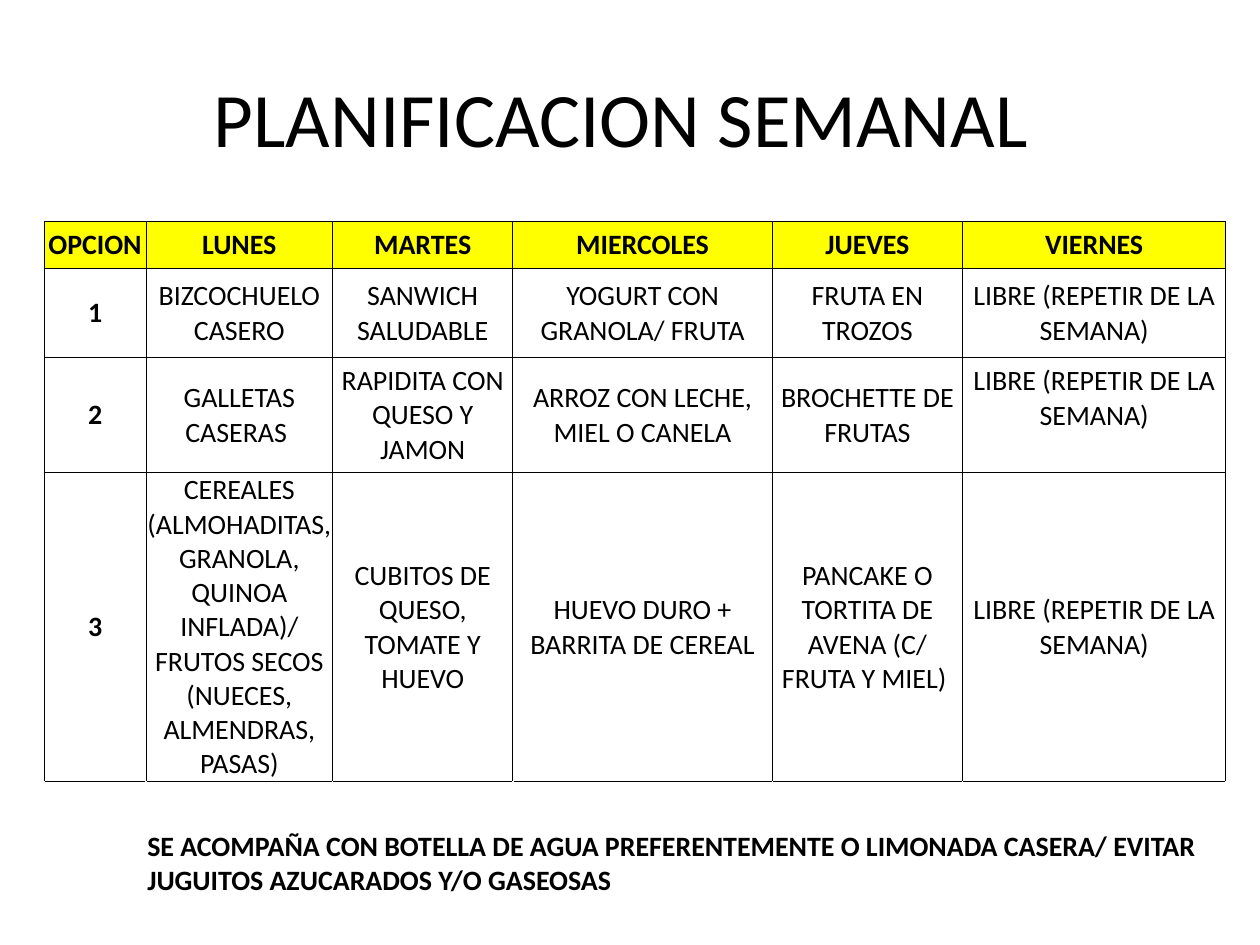
from lxml import etree
from pptx import Presentation
from pptx.dml.color import RGBColor
from pptx.enum import text as t
from pptx.oxml import ns
from pptx.util import Pt

COLORS = {"ink": "000000", "header": "FFFF00"}
FONT = "Calibri"
TITLE = "PLANIFICACION SEMANAL "
FREE = "LIBRE (REPETIR DE LA SEMANA)"
MENU = [
    ["OPCION", "LUNES", "MARTES", "MIERCOLES", "JUEVES", "VIERNES"],
    ["1", "BIZCOCHUELO CASERO", "SANWICH SALUDABLE", "YOGURT CON GRANOLA/ FRUTA",
     "FRUTA EN TROZOS", FREE],
    ["2", "GALLETAS CASERAS ", "RAPIDITA CON QUESO Y JAMON",
     "ARROZ CON LECHE, MIEL O CANELA", "BROCHETTE DE FRUTAS", FREE],
    ["3", "CEREALES (ALMOHADITAS, GRANOLA, QUINOA INFLADA)/\n"
     "FRUTOS SECOS (NUECES, ALMENDRAS,\nPASAS)",
     "CUBITOS DE QUESO, TOMATE Y HUEVO", "HUEVO DURO + BARRITA DE CEREAL",
     "PANCAKE O TORTITA DE AVENA (C/ FRUTA Y MIEL) ", FREE],
]
NOTE = ("SE ACOMPAÑA CON BOTELLA DE AGUA PREFERENTEMENTE O LIMONADA CASERA/ "
        "EVITAR JUGUITOS AZUCARADOS Y/O GASEOSAS")

LEFT, TOP = 25.2, 100
COLS = [58.3, 106.6, 103, 148.3, 108.7, 150.5]
ROWS = [26.6, 26.6, 51.1, 65.5, 176.4, 26.6, 40]
FIRST = 1  # table row of the menu header; the row above it is blank
LAST = FIRST + len(MENU) - 1
LINE = 19.5


def write(tf, content, size=16, bold=False, align=t.PP_ALIGN.CENTER):
    """Fill a text frame, one paragraph for each line of content."""
    for i, line in enumerate(content.split("\n")):
        p = tf.paragraphs[0] if i == 0 else tf.add_paragraph()
        p.alignment = align
        r = p.add_run()
        r.text = line
        r.font.name, r.font.size, r.font.bold = FONT, Pt(size), bold
        r.font.color.rgb = RGBColor.from_string(COLORS["ink"])


def add_borders(cell, sides):
    """Draw thin lines on the given sides; call before the cell is filled."""
    for side in sides:
        ln = etree.SubElement(cell._tc.get_or_add_tcPr(), ns.qn(f"a:ln{side}"),
                              w=str(Pt(0.5)))
        fill = etree.SubElement(ln, ns.qn("a:solidFill"))
        etree.SubElement(fill, ns.qn("a:srgbClr"), val=COLORS["ink"])


def border_sides(row):
    if FIRST <= row <= LAST:
        return "LRTB"
    return {FIRST - 1: "B", LAST + 1: "T"}.get(row, "")


def add_menu(s):
    table = s.shapes.add_table(len(ROWS), len(COLS), Pt(LEFT), Pt(TOP),
                               Pt(sum(COLS)), Pt(sum(ROWS))).table
    table.first_row = table.horz_banding = False
    for col, width in zip(table.columns, COLS):
        col.width = Pt(width)
    for y, height in enumerate(ROWS):
        table.rows[y].height = Pt(height)
        for x in range(len(COLS)):
            cell = table.cell(y, x)
            add_borders(cell, border_sides(y))
            cell.margin_left = cell.margin_right = cell.margin_top = Pt(0.7)
            cell.margin_bottom = Pt(0)
            cell.vertical_anchor = t.MSO_ANCHOR.MIDDLE
            if y == FIRST:
                cell.fill.solid()
                cell.fill.fore_color.rgb = RGBColor.from_string(COLORS["header"])
            else:
                cell.fill.background()
            if FIRST <= y <= LAST:
                write(cell.text_frame, MENU[y - FIRST][x], bold=y == FIRST or x == 0)
    # Friday of option 2 lines up with the top of its three-line neighbour
    table.cell(FIRST + 2, len(COLS) - 1).margin_bottom = Pt(LINE)

    note = table.cell(len(ROWS) - 1, 1)
    note.merge(table.cell(len(ROWS) - 1, len(COLS) - 1))
    note.vertical_anchor = t.MSO_ANCHOR.BOTTOM
    write(note.text_frame, NOTE, bold=True, align=t.PP_ALIGN.LEFT)


def main():
    prs = Presentation()
    prs.slide_width, prs.slide_height = Pt(720), Pt(540)
    s = prs.slides.add_slide(prs.slide_layouts[5])
    title = s.shapes.title
    title.left, title.top, title.width, title.height = Pt(36), Pt(21.6), Pt(648), Pt(90)
    title.text_frame.vertical_anchor = t.MSO_ANCHOR.MIDDLE
    write(title.text_frame, TITLE, size=44)
    add_menu(s)
    prs.save("out.pptx")


if __name__ == "__main__":
    main()
